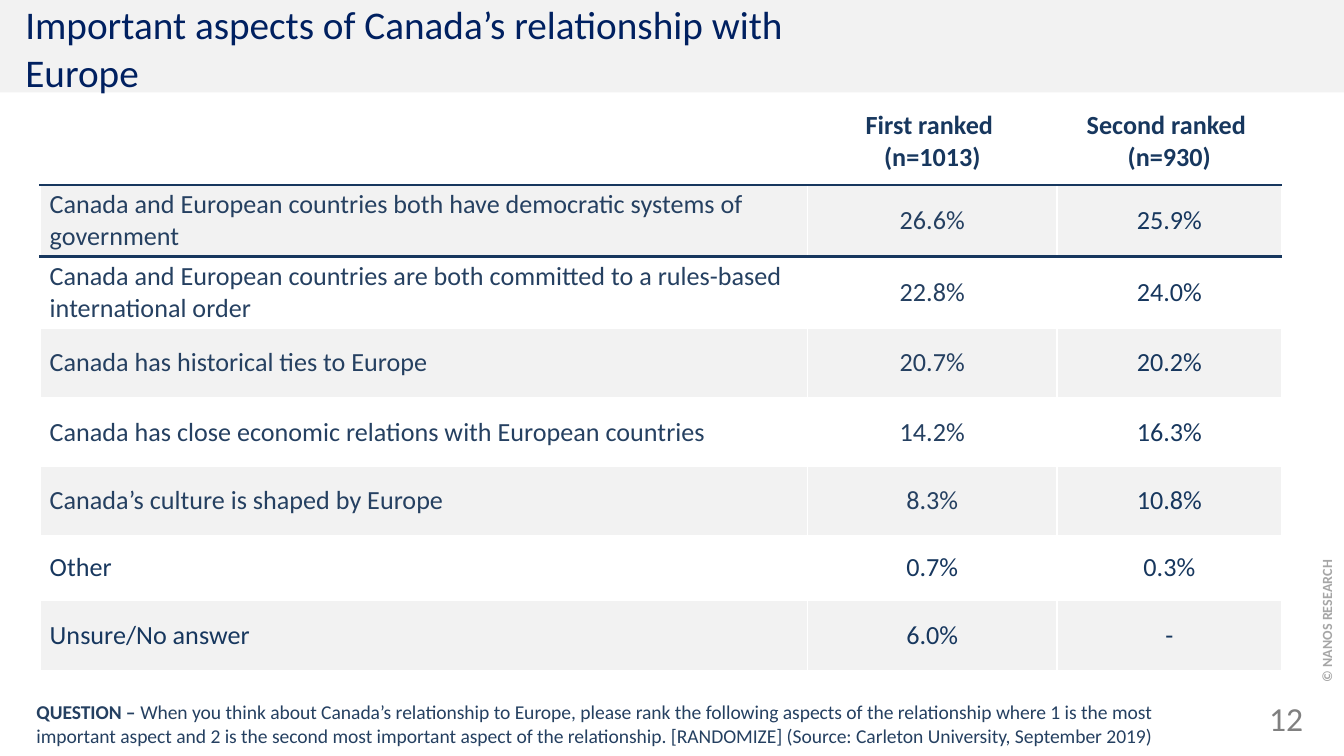
from lxml import etree
from pptx import Presentation
from pptx import util as u
from pptx.dml.color import RGBColor
from pptx.enum import shapes, text
from pptx.oxml.ns import qn

# Content
TITLE = "Important aspects of Canada’s relationship with Europe"
HEADERS = ["", ("First ranked ", "(n=1013)"), ("Second ranked ", "(n=930)")]
ROWS = [
    ("Canada and European countries both have democratic systems of government", "26.6%", "25.9%"),
    ("Canada and European countries are both committed to a rules-based international order", "22.8%", "24.0%"),
    ("Canada has historical ties to Europe", "20.7%", "20.2%"),
    ("Canada has close economic relations with European countries", "14.2%", "16.3%"),
    ("Canada’s culture is shaped by Europe", "8.3%", "10.8%"),
    ("Other", "0.7%", "0.3%"),
    ("Unsure/No answer", "6.0%", "-"),
]
QUESTION_LABEL = "QUESTION – "
QUESTION = (
    "When you think about Canada’s relationship to Europe, please rank the following "
    "aspects of the relationship where 1 is the most important aspect and 2 is the second "
    "most important aspect of the relationship. [RANDOMIZE] "
    "(Source: Carleton University, September 2019)"
)
COPYRIGHT = "© NANOS RESEARCH"
PAGE_NUMBER = "12"

# Style
FONT = "Calibri"
WHITE = RGBColor(0xFF, 0xFF, 0xFF)
BAND = RGBColor(0xF2, 0xF2, 0xF2)
NAVY = RGBColor(0x17, 0x37, 0x5E)
BLUE = RGBColor(0x25, 0x40, 0x61)
TITLE_BLUE = RGBColor(0x00, 0x20, 0x60)
GREY = RGBColor(0x80, 0x80, 0x80)
PALE_GREY = RGBColor(0xA6, 0xA6, 0xA6)

COLUMN_WIDTHS = [14.5, 4.72, 4.24]
ROW_HEIGHTS = [1.65, 1.35, 1.35, 1.32, 1.3, 1.3, 1.23, 1.32]
RULED_ROWS = (0, 1)  # rows with a navy rule beneath


def add_span(para, words, size, color, bold=False):
    span = para.add_run()
    span.text = words
    span.font.name = FONT
    span.font.size = u.Pt(size)
    span.font.bold = bold
    span.font.color.rgb = color


def add_text(page, place, spans, inset=(0.18, 0.1), anchor=text.MSO_ANCHOR.MIDDLE,
             align=text.PP_ALIGN.LEFT):
    box = page.shapes.add_textbox(*(u.Cm(n) for n in place))
    frame = box.text_frame
    frame.word_wrap = True
    frame.vertical_anchor = anchor
    frame.margin_left = frame.margin_right = u.Cm(inset[0])
    frame.margin_top = frame.margin_bottom = u.Cm(inset[1])
    para = frame.paragraphs[0]
    para.alignment = align
    for span in spans:
        add_span(para, *span)
    return box


def set_border(cell, side, color, points):
    line = etree.SubElement(cell._tc.get_or_add_tcPr(), qn("a:ln" + side), w=str(u.Pt(points)))
    fill = etree.SubElement(line, qn("a:solidFill"))
    etree.SubElement(fill, qn("a:srgbClr"), val=str(color))


def style_cell(cell, row, column):
    for side, edge_row in (("L", None), ("R", None), ("T", row - 1), ("B", row)):
        ruled = edge_row in RULED_ROWS
        set_border(cell, side, NAVY if ruled else WHITE, 1.5 if ruled else 1)
    if row % 2:
        cell.fill.solid()
        cell.fill.fore_color.rgb = BAND
    else:
        cell.fill.background()
    cell.vertical_anchor = text.MSO_ANCHOR.MIDDLE
    cell.margin_left = u.Cm(0.03 if column else 0.18)
    cell.margin_right = u.Cm(0.03)
    cell.margin_top = cell.margin_bottom = u.Cm(0.02)


def fill_cell(cell, lines, row, column):
    if row == 0 or row > 5 or column == 2:
        color = NAVY
    else:
        color = BLUE
    for index, line in enumerate(lines):
        frame = cell.text_frame
        para = frame.add_paragraph() if index else frame.paragraphs[0]
        para.alignment = text.PP_ALIGN.CENTER if column else text.PP_ALIGN.LEFT
        add_span(para, line, 14, color, row == 0)


def add_ranking(page):
    frame = page.shapes.add_table(
        len(ROW_HEIGHTS), len(COLUMN_WIDTHS), u.Cm(0.76), u.Cm(1.85),
        u.Cm(sum(COLUMN_WIDTHS)), u.Cm(sum(ROW_HEIGHTS)))
    table = frame.table
    for column, width in zip(table.columns, COLUMN_WIDTHS):
        column.width = u.Cm(width)
    for row, height in zip(table.rows, ROW_HEIGHTS):
        row.height = u.Cm(height)
    for r, values in enumerate([HEADERS, *ROWS]):
        for c, value in enumerate(values):
            cell = table.cell(r, c)
            style_cell(cell, r, c)
            if value:
                fill_cell(cell, [value] if isinstance(value, str) else value, r, c)


def main():
    deck = Presentation()
    deck.slide_width, deck.slide_height = u.Cm(25.4), u.Cm(14.29)
    page = deck.slides.add_slide(deck.slide_layouts[6])

    # Title band
    band = page.shapes.add_shape(shapes.MSO_SHAPE.RECTANGLE, 0, 0, deck.slide_width, u.Cm(1.75))
    band.shadow.inherit = False
    band.fill.solid()
    band.fill.fore_color.rgb = BAND
    band.line.fill.background()

    # Copyright line, reading upwards
    side_box = add_text(page, (24.66, 10.16, 0.84, 2.87), [(COPYRIGHT, 7.5, PALE_GREY, True)],
                        (0.25, 0.13), text.MSO_ANCHOR.TOP)
    side_box.text_frame._txBody.bodyPr.set("vert", "vert270")

    # Ranking table
    add_ranking(page)

    # Question, page number and title
    add_text(page, (0.56, 13.16, 21.62, 1.04),
             [(QUESTION_LABEL, 10.5, BLUE, True), (QUESTION, 10.5, BLUE)],
             (0.13, 0.08), text.MSO_ANCHOR.TOP)
    add_text(page, (23.62, 13.13, 1.19, 0.89), [(PAGE_NUMBER, 18, GREY)],
             align=text.PP_ALIGN.RIGHT)
    add_text(page, (0.3, 0.03, 15.37, 1.75), [(TITLE, 21, TITLE_BLUE)])

    deck.save("out.pptx")


if __name__ == "__main__":
    main()
